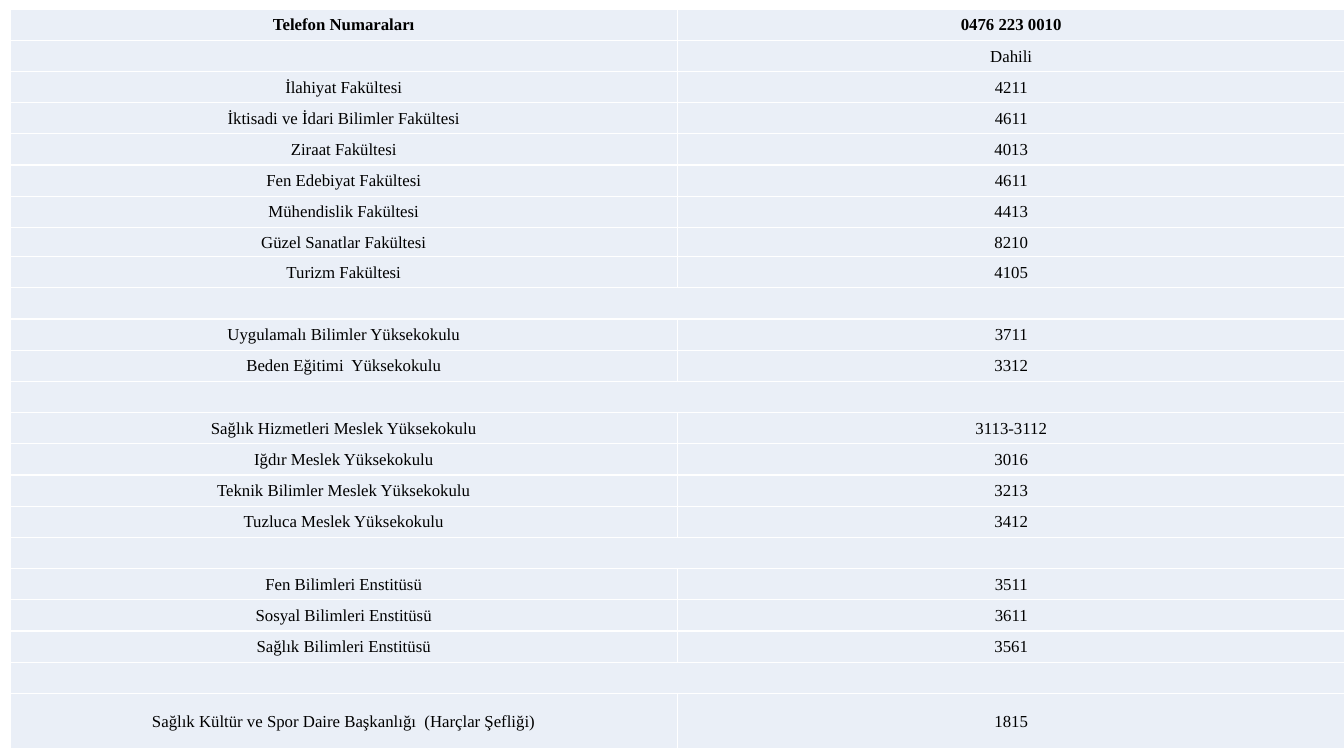
from lxml.etree import SubElement
from pptx import Presentation
from pptx.dml.color import RGBColor
from pptx.enum.text import MSO_ANCHOR, PP_ALIGN
from pptx.oxml import parse_xml
from pptx.oxml.ns import nsdecls, qn
from pptx.util import Inches, Pt

COLORS = {"cell": "EAEFF7", "border": "FFFFFF", "text": "000000"}
FONT = "Times New Roman"
SIZE = 12
GAP = ("", "")
DIRECTORY = [
    ("Telefon Numaraları", "0476 223 0010"),
    ("", "Dahili"),
    ("İlahiyat Fakültesi", "4211"),
    ("İktisadi ve İdari Bilimler Fakültesi", "4611"),
    ("Ziraat Fakültesi", "4013"),
    ("Fen Edebiyat Fakültesi", "4611"),
    ("Mühendislik Fakültesi", "4413"),
    ("Güzel Sanatlar Fakültesi", "8210"),
    ("Turizm Fakültesi", "4105"),
    GAP,
    ("Uygulamalı Bilimler Yüksekokulu", "3711"),
    ("Beden Eğitimi  Yüksekokulu", "3312"),
    GAP,
    ("Sağlık Hizmetleri Meslek Yüksekokulu", "3113-3112"),
    ("Iğdır Meslek Yüksekokulu", "3016"),
    ("Teknik Bilimler Meslek Yüksekokulu", "3213"),
    ("Tuzluca Meslek Yüksekokulu", "3412"),
    GAP,
    ("Fen Bilimleri Enstitüsü", "3511"),
    ("Sosyal Bilimleri Enstitüsü", "3611"),
    ("Sağlık Bilimleri Enstitüsü", "3561"),
    GAP,
    ("Sağlık Kültür ve Spor Daire Başkanlığı  (Harçlar Şefliği)", "1815"),
]
SPECIAL_HEIGHTS = {7: 0.29, len(DIRECTORY) - 1: 0.55}


def add_borders(cell):
    tc_pr = cell._tc.get_or_add_tcPr()
    for i, side in enumerate(("lnL", "lnR", "lnT", "lnB")):
        tc_pr.insert(i, parse_xml(
            f'<a:{side} {nsdecls("a")} w="{Pt(1)}"><a:solidFill>'
            f'<a:srgbClr val="{COLORS["border"]}"/></a:solidFill></a:{side}>'))


def format_cell(cell, text, bold):
    cell.fill.solid()
    cell.fill.fore_color.rgb = RGBColor.from_string(COLORS["cell"])
    cell.vertical_anchor = MSO_ANCHOR.MIDDLE
    cell.margin_left = cell.margin_right = cell.margin_top = Inches(0.01)
    cell.margin_bottom = 0
    add_borders(cell)
    p = cell.text_frame.paragraphs[0]
    p.alignment = PP_ALIGN.CENTER
    if text:
        r = p.add_run()
        r.text = text
        r.font.name = FONT
        r.font.size = Pt(SIZE)
        r.font.bold = bold
        r.font.color.rgb = RGBColor.from_string(COLORS["text"])
    else:
        SubElement(p._p, qn("a:endParaRPr"), sz=str(SIZE * 100))


def add_directory(s, left, top, width, height):
    table = s.shapes.add_table(len(DIRECTORY), 2, Inches(left), Inches(top),
                               Inches(width), Inches(height)).table
    table.first_row = False
    table.horz_banding = False
    for column in table.columns:
        column.width = Inches(width / 2)
    regular = ((height - sum(SPECIAL_HEIGHTS.values()))
               / (len(DIRECTORY) - len(SPECIAL_HEIGHTS)))
    for i, entry in enumerate(DIRECTORY):
        table.rows[i].height = Inches(SPECIAL_HEIGHTS.get(i, regular))
        for j, text in enumerate(entry):
            format_cell(table.cell(i, j), text, i == 0)
        if entry == GAP:
            table.cell(i, 0).merge(table.cell(i, 1))


def main():
    prs = Presentation()
    prs.slide_width = Inches(13.33)
    prs.slide_height = Inches(7.5)
    s = prs.slides.add_slide(prs.slide_layouts[6])
    add_directory(s, 0.1, 0.09, 13.24, 7.34)
    prs.save("out.pptx")


if __name__ == "__main__":
    main()
